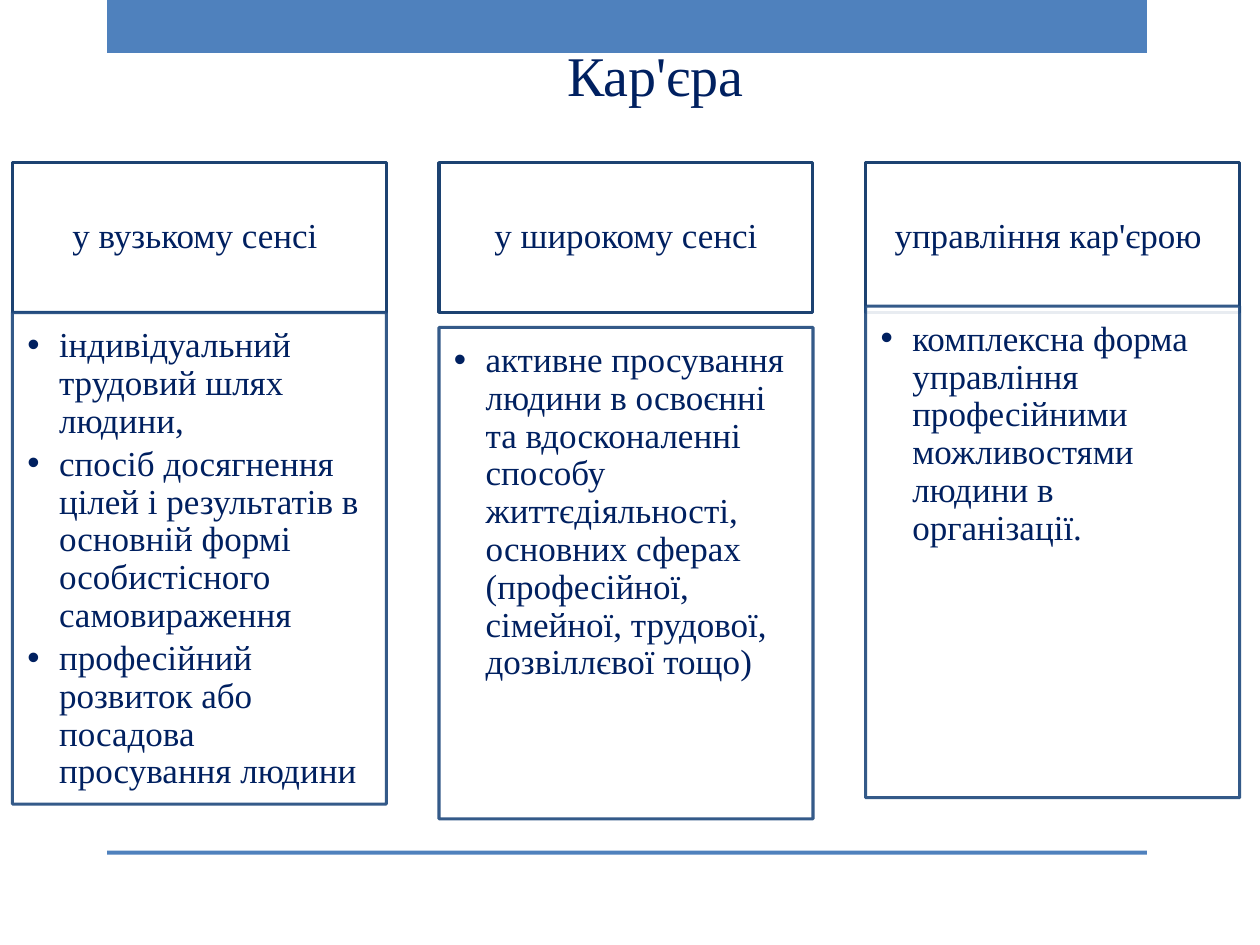
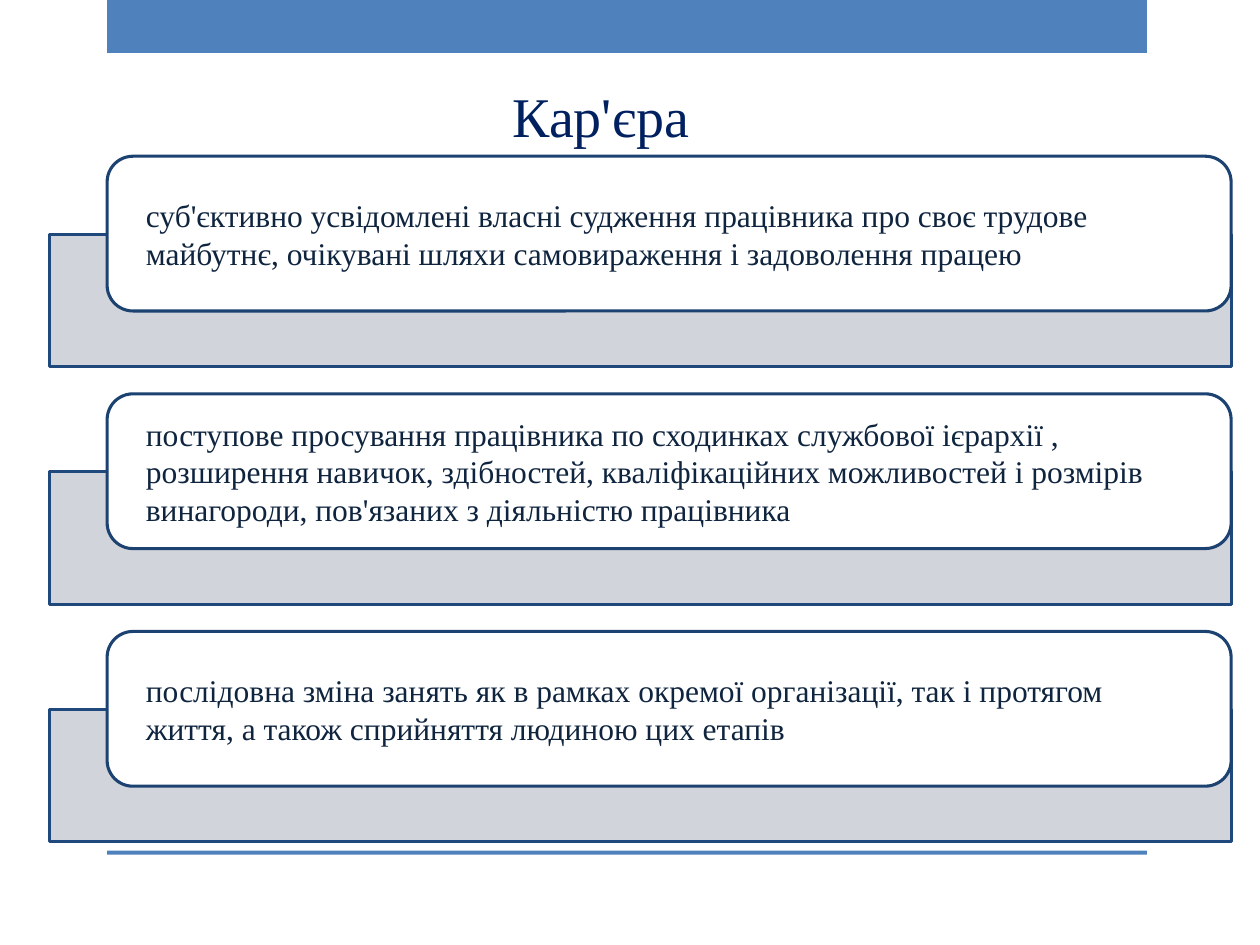
"""Builds two slides on the meanings of a career."""
from lxml import etree
from pptx import Presentation
from pptx.dml.color import RGBColor
from pptx.enum import shapes, text
from pptx.oxml.ns import qn
from pptx.util import Cm, Pt

NAVY = RGBColor(0x00, 0x20, 0x60)
INK = RGBColor(0x0F, 0x24, 0x3E)
BAND = RGBColor(0x4F, 0x81, 0xBD)
EDGE = RGBColor(0x1C, 0x42, 0x71)
SOFT_EDGE = RGBColor(0x1F, 0x49, 0x7D)
PLATE = RGBColor(0xCD, 0xD0, 0xD7)
WHITE = RGBColor(0xFF, 0xFF, 0xFF)
RECT = shapes.MSO_SHAPE.RECTANGLE
ROUNDED = shapes.MSO_SHAPE.ROUNDED_RECTANGLE
TITLE_ONLY, COMPARISON = 5, 4

SENSES = [
    ("у вузькому сенсі ", 1, 6.3, [
        "індивідуальний трудовий шлях людини,",
        "спосіб досягнення цілей і результатів в основній формі "
        "особистісного самовираження",
        "професійний розвиток або посадова просування людини"]),
    ("у широкому сенсі", 2, 6.6, [
        "активне просування людини в освоєнні та вдосконаленні способу "
        "життєдіяльності, основних сферах (професійної, сімейної, трудової, "
        "дозвіллєвої тощо)"]),
    ("управління кар'єрою ", 4, 6.17, [
        "комплексна форма управління професійними можливостями людини "
        "в організації."]),
]
ASPECTS = [
    "суб'єктивно усвідомлені власні судження працівника про своє трудове "
    "майбутнє, очікувані шляхи самовираження і задоволення працею",
    "поступове просування працівника по сходинках службової ієрархії , "
    "розширення навичок, здібностей, кваліфікаційних можливостей і розмірів "
    "винагороди, пов'язаних з діяльністю працівника",
    "послідовна зміна занять як в рамках окремої організації, так і протягом "
    "життя, а також сприйняття людиною цих етапів",
]


class Deck:
    """Holds the style and the current slide."""

    font = "Times New Roman"

    def __init__(self):
        self.prs = Presentation()
        self.prs.slide_width, self.prs.slide_height = Cm(25.4), Cm(19.05)
        self.slide = None

    def open_slide(self, layout):
        """Starts a slide on the given layout."""
        self.slide = self.prs.slides.add_slide(self.prs.slide_layouts[layout])

    def master_bands(self):
        """Moves the top and bottom bands to the master."""
        for top, height in ((0, 1.07), (17.15, 0.08)):
            band = self.box(RECT, (2.16, top, 20.96, height), BAND)
            self.prs.slide_master.shapes.element.append(band.element)

    def place(self, part, area):
        """Sets the position and size in centimetres."""
        part.left, part.top, part.width, part.height = map(Cm, area)

    def paint(self, part, fill, edge=None):
        """Sets the fill and the outline."""
        part.fill.solid()
        part.fill.fore_color.rgb = fill
        if edge is None:
            part.line.fill.background()
        else:
            part.line.color.rgb = edge
            part.line.width = Pt(1.75)

    def fade(self, *fill_parents):
        """Makes each solid fill slightly transparent."""
        for parent in fill_parents:
            color = parent.find(qn("a:solidFill")).find(qn("a:srgbClr"))
            etree.SubElement(color, qn("a:alpha"), val="90000")

    def frame(self, part, anchor, insets):
        """Prepares a wrapped text frame and returns it."""
        frame = part.text_frame
        frame.word_wrap = True
        frame.auto_size = text.MSO_AUTO_SIZE.NONE
        frame.vertical_anchor = anchor
        (frame.margin_left, frame.margin_top,
         frame.margin_right, frame.margin_bottom) = map(Cm, insets)
        return frame

    def set_words(self, paragraph, words, size, color, align=text.PP_ALIGN.LEFT):
        """Fills a paragraph and formats its runs."""
        paragraph.text = words
        paragraph.alignment = align
        for run in paragraph.runs:
            run.font.name = self.font
            run.font.size = Pt(size)
            run.font.bold = False
            run.font.color.rgb = color

    def box(self, kind, area, fill, edge=None):
        """Adds a flat preset shape."""
        part = self.slide.shapes.add_shape(kind, *map(Cm, area))
        part.shadow.inherit = False
        self.paint(part, fill, edge)
        return part

    def title(self, words, left, top):
        """Places the title."""
        heading = self.slide.shapes.title
        self.place(heading, (left, top, 4.11, 1.63))
        frame = self.frame(heading, text.MSO_ANCHOR.TOP, (0.25, 0.13, 0.25, 0.13))
        frame.word_wrap = False
        self.set_words(frame.paragraphs[0], words, 32, NAVY)

    def sense(self, words, area):
        """Adds a column heading."""
        part = self.box(RECT, area, WHITE, EDGE)
        frame = self.frame(part, text.MSO_ANCHOR.MIDDLE, (0.41, 0.23, 0.41, 0.23))
        paragraph = frame.paragraphs[0]
        self.set_words(paragraph, words, 20, NAVY, text.PP_ALIGN.CENTER)
        paragraph.line_spacing = 0.9

    def bullets(self, index, items, area):
        """Fills a body placeholder with a framed list and brings it forward."""
        body = self.slide.placeholders[index]
        self.place(body, area)
        self.paint(body, WHITE, SOFT_EDGE)
        outline = body.element.spPr
        self.fade(outline, outline.find(qn("a:ln")))
        frame = self.frame(body, text.MSO_ANCHOR.TOP, (0.3, 0.3, 0.41, 0.43))
        for number, item in enumerate(items):
            paragraph = frame.add_paragraph() if number else frame.paragraphs[0]
            self.set_words(paragraph, item, 20, NAVY)
            paragraph.line_spacing = 0.9
            paragraph.space_before, paragraph.space_after = Pt(0), Pt(3)
            props = paragraph._p.get_or_add_pPr()
            props.set("marL", str(Cm(0.64)))
            props.set("indent", str(-Cm(0.64)))
            etree.SubElement(props, qn("a:buChar"), char="•")
        self.slide.shapes.element.append(body.element)

    def aspect(self, words, top):
        """Adds a rounded card over a grey plate."""
        plate = self.box(RECT, (0.99, top + 1.57, 23.83, 2.67), PLATE, SOFT_EDGE)
        self.fade(plate.element.spPr)
        card = self.box(ROUNDED, (2.16, top, 22.66, 3.12), WHITE, EDGE)
        frame = self.frame(card, text.MSO_ANCHOR.MIDDLE, (0.63, 0, 0.63, 0))
        self.set_words(frame.paragraphs[0], words, 18, INK)

    def drop_empty(self):
        """Removes placeholders left without text."""
        for spare in list(self.slide.placeholders):
            if not spare.text_frame.text:
                spare.element.getparent().remove(spare.element)


def main():
    """Builds and saves the deck."""
    deck = Deck()
    deck.open_slide(COMPARISON)
    deck.master_bands()
    deck.title("Кар'єра", 11.18, 0.69)
    for column, (sense, index, list_top, items) in enumerate(SENSES):
        left = 0.25 + 8.6 * column
        deck.sense(sense, (left, 3.28, 7.54, 3.02))
        deck.bullets(index, items, (left, list_top, 7.54, 9.91))
    deck.drop_empty()

    deck.open_slide(TITLE_ONLY)
    deck.title("Кар'єра", 10.08, 1.52)
    for row, aspect in enumerate(ASPECTS):
        deck.aspect(aspect, 3.15 + 4.79 * row)
    deck.prs.save("out.pptx")


if __name__ == "__main__":
    main()
